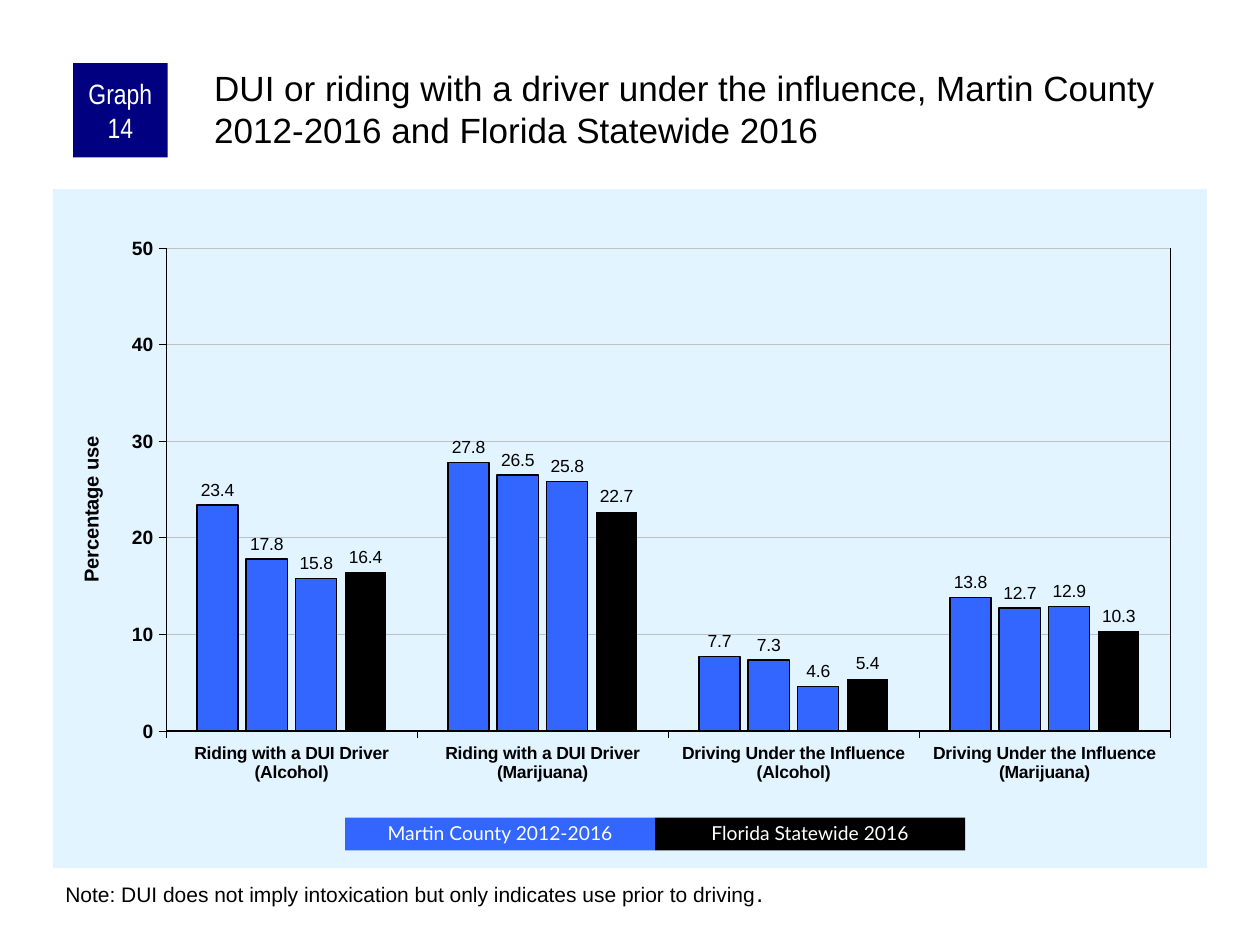
from dataclasses import dataclass

from lxml import etree
from pptx import Presentation
from pptx import oxml
from pptx.chart.data import CategoryChartData
from pptx.dml.color import RGBColor
from pptx.enum import chart as charts, shapes, text
from pptx.util import Inches, Pt

NS = {
    "a": "http://schemas.openxmlformats.org/drawingml/2006/main",
    "c": "http://schemas.openxmlformats.org/drawingml/2006/chart",
}
DECLARED = " ".join(f'xmlns:{prefix}="{uri}"' for prefix, uri in NS.items())


@dataclass(frozen=True)
class Theme:
    black: str = "000000"
    white: str = "FFFFFF"
    navy: str = "000080"
    county: str = "3366FF"
    panel: str = "E1F4FF"
    grid: str = "C0C0C0"
    font: str = "Arial"
    narrow: str = "Arial Narrow"
    legend_font: str = "Lato"
    title: float = 20
    badge: float = 16
    note: float = 12
    note_end: float = 14
    axis_title: float = 11.5
    axis: float = 11
    legend: float = 11
    label: float = 10
    hairline: float = 0.25


THEME = Theme()
CATEGORIES = [
    "Riding with a DUI Driver (Alcohol)",
    "Riding with a DUI Driver (Marijuana)",
    "Driving Under the Influence (Alcohol)",
    "Driving Under the Influence (Marijuana)",
]
SERIES = [
    ("Series 1", (23.4, 27.8, 7.7, 13.8), THEME.county, 1),
    ("Series 2", (17.8, 26.5, 7.3, 12.7), THEME.county, 1),
    ("Series 3", (15.8, 25.8, 4.6, 12.9), THEME.county, 0.75),
    ("Series 4", (16.4, 22.7, 5.4, 10.3), THEME.black, None),
]


def rgb(value):
    return RGBColor.from_string(value)


def box(left, top, width, height):
    return [Inches(length) for length in (left, top, width, height)]


def style_font(font, size, color=THEME.black, name=THEME.font, bold=False):
    font.size, font.name, font.bold = Pt(size), name, bold
    font.color.rgb = rgb(color)


def style_line(line, color, width):
    line.color.rgb = rgb(color)
    line.width = Pt(width)


def write(frame, words, align=None, anchor=None, insets=None, spacing=None, **font):
    frame.word_wrap = True
    if anchor is not None:
        frame.vertical_anchor = anchor
    if insets:
        (frame.margin_left, frame.margin_top,
         frame.margin_right, frame.margin_bottom) = box(*insets)
    paragraph = frame.paragraphs[0]
    paragraph.alignment = align
    paragraph.line_spacing = spacing
    run = paragraph.add_run()
    run.text = words
    style_font(run.font, **font)
    return paragraph


def add_text(slide, place, words, **style):
    return write(slide.shapes.add_textbox(*box(*place)).text_frame, words, **style)


def add_block(slide, place, fill, words, **style):
    block = slide.shapes.add_shape(shapes.MSO_SHAPE.RECTANGLE, *box(*place))
    block.shadow.inherit = False
    block.fill.solid()
    block.fill.fore_color.rgb = rgb(fill)
    block.line.fill.background()
    write(block.text_frame, words, align=text.PP_ALIGN.CENTER,
          anchor=text.MSO_ANCHOR.MIDDLE, color=THEME.white, **style)


def area_format(fill, line):
    return oxml.parse_xml(
        f"<c:spPr {DECLARED}>{fill}<a:ln>{line}</a:ln></c:spPr>")


def solid(color):
    return f'<a:solidFill><a:srgbClr val="{color}"/></a:solidFill>'


def frame_plot(chart, left, top, width, height):
    plot_area = chart._chartSpace.find(".//c:plotArea", NS)
    for old in plot_area.findall("c:layout", NS):
        plot_area.remove(old)
    layout = oxml.parse_xml(f"<c:layout {DECLARED}><c:manualLayout/></c:layout>")
    settings = dict(layoutTarget="inner", xMode="edge", yMode="edge",
                    x=left, y=top, w=width, h=height)
    for tag, value in settings.items():
        etree.SubElement(layout[0], f"{{{NS['c']}}}{tag}").set("val", str(value))
    plot_area.insert(0, layout)
    plot_area.append(area_format("<a:noFill/>", solid(THEME.black)))
    chart._chartSpace.find("c:chart", NS).addnext(
        area_format(solid(THEME.panel), "<a:noFill/>"))


def style_axis(axis, size):
    axis.major_tick_mark = charts.XL_TICK_MARK.OUTSIDE
    axis.minor_tick_mark = charts.XL_TICK_MARK.NONE
    style_font(axis.tick_labels.font, size, bold=True)
    style_line(axis.format.line, THEME.black, THEME.hairline)


def style_series(series, color, outline):
    series.format.fill.solid()
    series.format.fill.fore_color.rgb = rgb(color)
    if outline:
        style_line(series.format.line, THEME.black, outline)
    else:
        series.format.line.fill.background()
    labels = series.data_labels
    labels.show_value = True
    labels.number_format, labels.number_format_is_linked = "0.0", False
    labels.position = charts.XL_LABEL_POSITION.OUTSIDE_END
    style_font(labels.font, THEME.label)


def add_usage_chart(slide, place):
    usage = CategoryChartData(number_format="0.0")
    usage.categories = CATEGORIES
    for name, values, _, _ in SERIES:
        usage.add_series(name, values)
    chart = slide.shapes.add_chart(
        charts.XL_CHART_TYPE.COLUMN_CLUSTERED, *box(*place), usage).chart
    chart.has_title = chart.has_legend = False
    style_font(chart.font, THEME.axis_title)
    bars = chart.plots[0]
    bars.gap_width, bars.overlap, bars.vary_by_categories = 150, -20, False
    for series, (_, _, color, outline) in zip(bars.series, SERIES):
        style_series(series, color, outline)

    style_axis(chart.category_axis, THEME.label)
    percent = chart.value_axis
    style_axis(percent, THEME.axis)
    percent.minimum_scale, percent.maximum_scale, percent.major_unit = 0, 50, 10
    percent.tick_labels.number_format = "0"
    percent.tick_labels.number_format_is_linked = False
    style_line(percent.major_gridlines.format.line, THEME.grid, THEME.hairline)
    write(percent.axis_title.text_frame, "Percentage use",
          size=THEME.axis_title, bold=True)
    frame_plot(chart, 0.098, 0.087, 0.87, 0.711)


def main():
    deck = Presentation()
    deck.slide_width, deck.slide_height = Inches(10), Inches(7.5)
    slide = deck.slides.add_slide(deck.slide_layouts[6])

    add_usage_chart(slide, (0.42, 1.5, 9.16, 5.39))
    add_block(slide, (0.58, 0.5, 0.75, 0.75), THEME.navy, "Graph 14",
              insets=(0.05, 0, 0.05, 0), size=THEME.badge, name=THEME.narrow)
    add_text(slide, (1.67, 0.5, 7.92, 0.83),
             "DUI or riding with a driver under the influence, "
             "Martin County 2012-2016 and Florida Statewide 2016",
             insets=(0.03, 0.03, 0, 0), size=THEME.title)
    note = add_text(slide, (0.42, 6.92, 9.17, 0.34),
                    "Note: DUI does not imply intoxication "
                    "but only indicates use prior to driving", size=THEME.note)
    full_stop = note.add_run()
    full_stop.text = "."
    style_font(full_stop.font, THEME.note_end)

    key_width = 2.46
    keys = [("Martin County 2012-2016", THEME.county),
            ("Florida Statewide 2016", THEME.black)]
    for index, (region, color) in enumerate(keys):
        add_block(slide, (2.74 + index * key_width, 6.49, key_width, 0.26), color,
                  region, spacing=0.9, size=THEME.legend, name=THEME.legend_font)

    deck.save("out.pptx")


if __name__ == "__main__":
    main()
